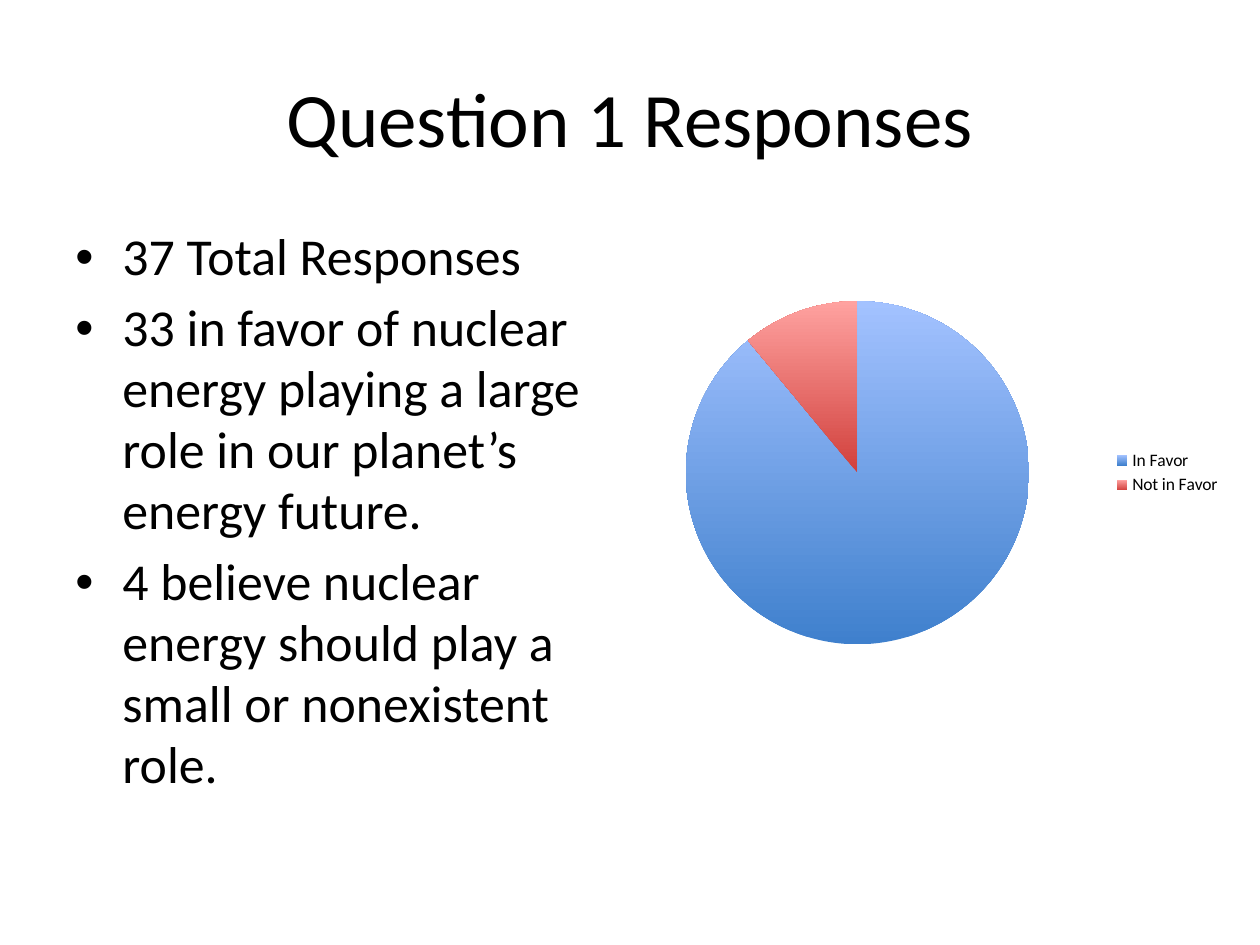
from dataclasses import dataclass

from lxml import etree
from pptx import Presentation
from pptx import util as u
from pptx.chart.data import CategoryChartData
from pptx.dml.color import RGBColor
from pptx.enum import chart as ch, text
from pptx.oxml.ns import qn

FONT = "Calibri"
BLACK = "000000"
INDENT = u.Cm(0.95)


@dataclass
class Box:
    left: float
    top: float
    width: float
    height: float

    def lengths(self) -> list[u.Cm]:
        return [u.Cm(side) for side in (self.left, self.top, self.width, self.height)]


@dataclass
class Answer:
    label: str
    percent: int
    bottom: str
    top: str


ANSWERS = [
    Answer("In Favor", 89, "3F80CD", "A3C2FF"),
    Answer("Not in Favor", 11, "D1403C", "FFA2A0"),
]
FINDINGS = [
    "37 Total Responses",
    "33 in favor of nuclear energy playing a large role in our planet’s energy future.",
    "4 believe nuclear energy should play a small or nonexistent role.",
]


def paint(color_format, color: str) -> None:
    color_format.rgb = RGBColor.from_string(color)


def style_font(font, size: float) -> None:
    font.name = FONT
    font.size = u.Pt(size)
    paint(font.color, BLACK)


def add_text(slide, box: Box, lines: list[str], size: float, anchor):
    frame = slide.shapes.add_textbox(*box.lengths()).text_frame
    frame.word_wrap = True
    frame.vertical_anchor = anchor
    frame.text = "\n".join(lines)
    for paragraph in frame.paragraphs:
        for run in paragraph.runs:
            style_font(run.font, size)
    return frame.paragraphs


def add_bullet(paragraph) -> None:
    paragraph.space_before = u.Pt(5.9)
    paragraph.line_spacing = 0.98
    properties = paragraph._p.get_or_add_pPr()
    properties.set("marL", str(INDENT))
    properties.set("indent", str(-INDENT))
    etree.SubElement(properties, qn("a:buFont"), typeface="Arial")
    etree.SubElement(properties, qn("a:buChar"), char="•")


def add_answer_pie(slide, box: Box, answers: list[Answer]) -> None:
    votes = CategoryChartData()
    votes.categories = [answer.label for answer in answers]
    votes.add_series("Series 1", [answer.percent for answer in answers])
    pie = slide.shapes.add_chart(ch.XL_CHART_TYPE.PIE, *box.lengths(), votes).chart
    pie.has_title = False
    style_font(pie.font, 10)
    pie.has_legend = True
    pie.legend.position = ch.XL_LEGEND_POSITION.RIGHT
    pie.legend.include_in_layout = False
    plot = pie.plots[0]
    plot.vary_by_categories = True
    for index, answer in enumerate(answers):
        slice_format = plot.series[0].points[index].format
        slice_format.line.fill.background()
        slice_format.fill.gradient()
        slice_format.fill.gradient_angle = 90
        for stop, color in zip(slice_format.fill.gradient_stops, (answer.bottom, answer.top)):
            paint(stop.color, color)


def main() -> None:
    deck = Presentation()
    deck.slide_width, deck.slide_height = u.Cm(25.4), u.Cm(19.05)
    slide = deck.slides.add_slide(deck.slide_layouts[6])

    title = add_text(slide, Box(1.27, 0.76, 22.86, 3.18), ["Question 1 Responses"],
                     44, text.MSO_ANCHOR.MIDDLE)
    title[0].alignment = text.PP_ALIGN.CENTER

    findings = add_text(slide, Box(1.27, 4.45, 11.4, 12.57), FINDINGS,
                        29.6, text.MSO_ANCHOR.TOP)
    for finding in findings:
        add_bullet(finding)

    add_answer_pie(slide, Box(12.17, 5.72, 12.7, 7.62), ANSWERS)
    deck.save("out.pptx")


if __name__ == "__main__":
    main()
